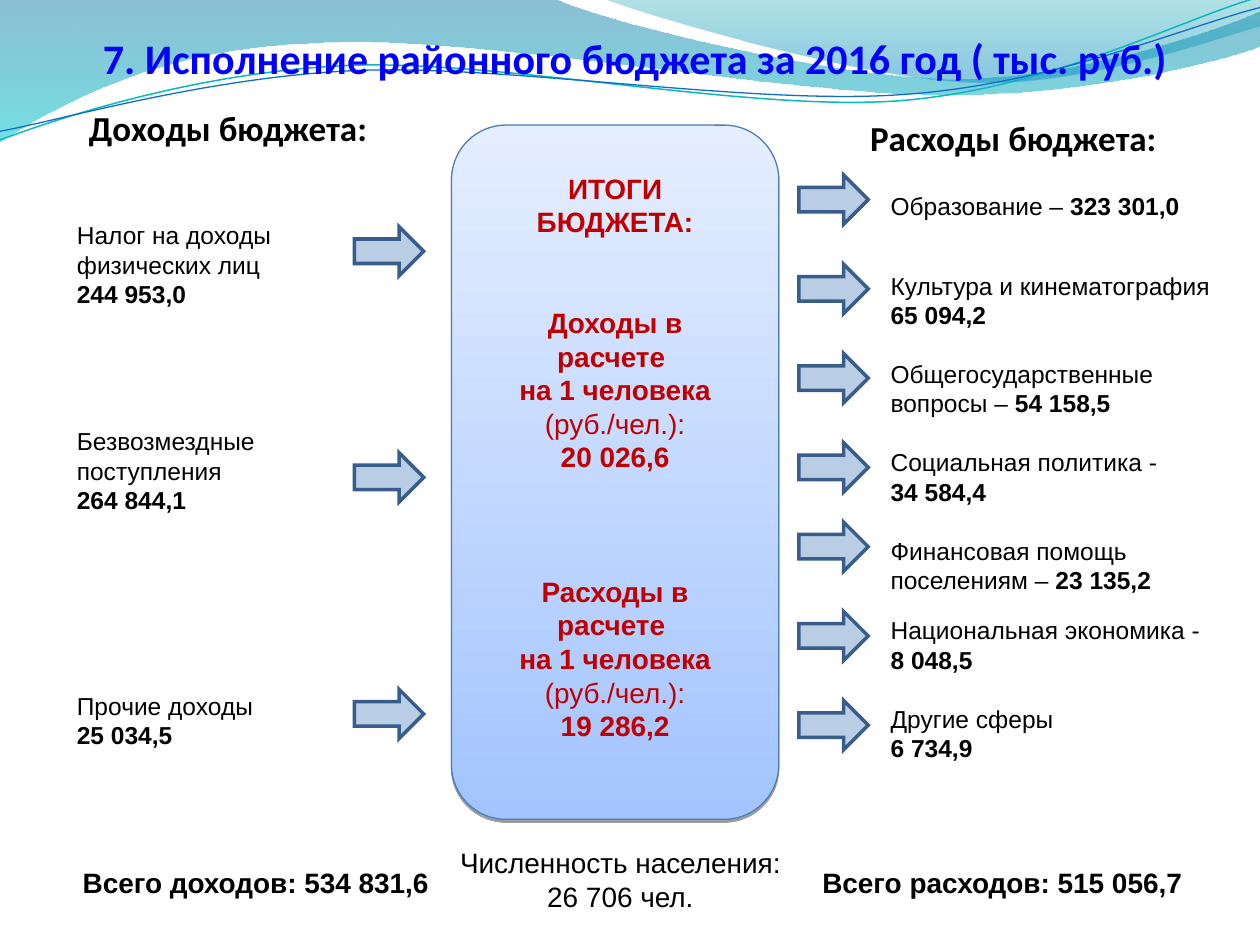
import math
from dataclasses import dataclass
from lxml import etree
from pptx import Presentation
from pptx.dml.color import RGBColor
from pptx.enum import shapes, text
from pptx.oxml import ns
from pptx.util import Pt

HUE = {
    "title": "0000FF", "ink": "000000", "red": "C00000",
    "sea": "0074A1", "aqua": "00C6CF", "teal": "00A1A9", "sky": "008BBF",
    "cyan": "0AB8BF", "blue": "0F6FC6",
    "pale": "E5EEFF", "deep": "A3C4FF", "edge": "4A7EBB",
    "arrow": "B9CDE5", "rim": "385D8A",
}
LEFT, MID = text.PP_ALIGN.LEFT, text.PP_ALIGN.CENTER
TOP, LOW = text.MSO_ANCHOR.TOP, text.MSO_ANCHOR.BOTTOM
ARROW_W, ARROW_H = 39.6, 28
TILT = 2.7


@dataclass
class Run:
    words: str
    bold: bool = False


@dataclass
class Para:
    runs: list[Run]
    gap: float = 0


@dataclass
class Style:
    size: float
    hue: str = "ink"
    font: str = "Arial"
    align: int = LEFT
    anchor: int = TOP


@dataclass
class Stop:
    hue: str
    pos: float
    alpha: int = 100


@dataclass
class Wave:
    box: tuple
    steps: list
    stops: list[Stop]


@dataclass
class Curve:
    box: tuple
    steps: list
    hue: str
    width: float


def rgb(hue: str) -> RGBColor:
    return RGBColor.from_string(HUE[hue])


def plain(words: str, gap: float = 0) -> Para:
    return Para([Run(words)], gap)


def bold(words: str, gap: float = 0) -> Para:
    return Para([Run(words, True)], gap)


def mixed(words: str, sum_: str, gap: float = 0) -> Para:
    return Para([Run(words), Run(sum_, True)], gap)


def write(shape, box: tuple, paras: list[Para], style: Style) -> None:
    shape.left, shape.top, shape.width, shape.height = map(Pt, box)
    frame = shape.text_frame
    frame.word_wrap = True
    frame.auto_size = text.MSO_AUTO_SIZE.NONE
    frame.vertical_anchor = style.anchor
    for n, para in enumerate(paras):
        line = frame.add_paragraph() if n else frame.paragraphs[0]
        line.alignment = style.align
        line.space_before = Pt(para.gap)
        if style.font == "Arial":
            line.line_spacing = Pt(style.size * 1.2)
        props = line._p.get_or_add_pPr()
        props.set("marL", "0")
        props.set("indent", "0")
        etree.SubElement(props, ns.qn("a:buNone"))
        for part in para.runs:
            run = line.add_run()
            run.text = part.words
            run.font.name = style.font
            run.font.size = Pt(style.size)
            run.font.bold = part.bold
            run.font.color.rgb = rgb(style.hue)


def shade(shape, stops: list[Stop]) -> None:
    shape.fill.gradient()
    shape.fill.gradient_angle = 270
    for mark, stop in zip(shape.fill.gradient_stops, stops):
        mark.color.rgb = rgb(stop.hue)
        mark.position = stop.pos
        if stop.alpha < 100:
            tint = mark._gs.find(ns.qn("a:srgbClr"))
            etree.SubElement(tint, ns.qn("a:alpha"), val=str(stop.alpha * 1000))


def trace(slide, box: tuple, steps: list, close: bool, tilt: float = 0):
    x, y, wide, high = box
    mid_x, mid_y = x + wide / 2, y + high / 2
    cos, sin = math.cos(math.radians(tilt)), math.sin(math.radians(tilt))
    pen = slide.shapes.build_freeform(Pt(x), Pt(y))
    pen.add_line_segments([(Pt(x + wide), Pt(y)), (Pt(x + wide), Pt(y + high))])
    shape = pen.convert_to_shape()
    shape.shadow.inherit = False
    shape.rotation = -tilt % 360
    route = next(shape._element.iter(ns.qn("a:path")))
    for old in list(route):
        route.remove(old)
    for n, step in enumerate(steps):
        tag = "cubicBezTo" if len(step) == 6 else "lnTo" if n else "moveTo"
        move = etree.SubElement(route, ns.qn("a:" + tag))
        for a, b in zip(step[::2], step[1::2]):
            a, b = a - mid_x, b - mid_y
            etree.SubElement(move, ns.qn("a:pt"),
                             x=str(Pt(a * cos - b * sin + wide / 2)),
                             y=str(Pt(a * sin + b * cos + high / 2)))
    if close:
        etree.SubElement(route, ns.qn("a:close"))
    return shape


def draw_wave(slide, wave: Wave) -> None:
    shape = trace(slide, wave.box, wave.steps, True)
    shade(shape, wave.stops)
    shape.line.fill.background()


def draw_curve(slide, curve: Curve) -> None:
    shape = trace(slide, curve.box, curve.steps, False, TILT)
    shape.fill.background()
    shape.line.color.rgb = rgb(curve.hue)
    shape.line.width = Pt(curve.width)


def draw_panel(slide) -> None:
    kind = shapes.MSO_SHAPE.ROUNDED_RECTANGLE
    panel = slide.shapes.add_shape(kind, Pt(258), Pt(71.5), Pt(187), Pt(396.7))
    shade(panel, [Stop("pale", 0), Stop("deep", 1)])
    panel.line.color.rgb = rgb("edge")
    panel.line.width = Pt(0.75)
    panel.shadow.inherit = False
    effect = panel._element.spPr.find(ns.qn("a:effectLst"))
    drop = etree.SubElement(effect, ns.qn("a:outerShdw"), blurRad="0",
                            dist=str(Pt(1.6)), dir="5400000", rotWithShape="0")
    tint = etree.SubElement(drop, ns.qn("a:srgbClr"), val=HUE["ink"])
    etree.SubElement(tint, ns.qn("a:alpha"), val="38000")


def draw_arrow(slide, x: float, y: float) -> None:
    kind = shapes.MSO_SHAPE.RIGHT_ARROW
    arrow = slide.shapes.add_shape(kind, Pt(x), Pt(y), Pt(ARROW_W), Pt(ARROW_H))
    arrow.shadow.inherit = False
    arrow.fill.solid()
    arrow.fill.fore_color.rgb = rgb("arrow")
    arrow.line.color.rgb = rgb("rim")
    arrow.line.width = Pt(2)
    etree.SubElement(arrow.line._ln, ns.qn("a:miter"), lim="800000")


def add_note(slide, box: tuple, paras: list[Para], style: Style) -> None:
    write(slide.shapes.add_textbox(*map(Pt, box)), box, paras, style)


def per_head(name: str, sum_: str, gap: float) -> list[Para]:
    return [bold(name + " в расчете ", gap),
            Para([Run("на 1 человека ", True), Run("(руб./чел.):")]), bold(sum_)]


WAVES = [
    Wave((-0.7, -0.7, 721.4, 82),
         [(0, 0), (317, -0.7), (343, 12, 478, 45, 546, 45), (614, 45, 690, 19, 720, 6.5),
          (720.7, 26), (708, 32, 626, 55, 537, 54), (447, 54, 275, 20, 185, 24.5),
          (92, 26, 33, 60, -0.7, 81.3), (0, 0)],
         [Stop("sea", 0, 45), Stop("aqua", 1, 55)]),
    Wave((345, -0.7, 375, 50.4),
         [(345, -0.7), (366, 8, 491, 45, 554, 47), (616, 50, 692, 23, 720, 15), (720, 0),
          (345, -0.7)], [Stop("teal", 0, 30), Stop("sky", 0.8, 45)]),
]
CURVES = [
    Curve((-1.4, 15.8, 721.4, 51.1),
          [(0, 80), (34.6, 67, 113.8, 41, 199.4, 37.4), (284.4, 33.8, 427, 64, 513.4, 57.6),
           (599.8, 51, 675.4, 10.8, 718.6, -1.4)], "cyan", 0.85),
    Curve((-1.4, 21.6, 722.2, 41.8),
          [(0, 75), (33.8, 69, 118, 44, 203.8, 40.3), (290, 36.7, 430, 60.5, 516.2, 54),
           (602, 48.2, 677.5, 15, 720, 4.3)], "blue", 0.75),
]
INCOME = [
    plain("Налог на доходы физических лиц"), bold("244 953,0"),
    plain("Безвозмездные поступления", 67.2), bold("264 844,1"),
    plain("Прочие доходы", 100.8), bold("25 034,5"),
]
SPEND = [
    mixed("Образование – ", "323 301,0"),
    plain("Культура и кинематография", 28.8), bold("65 094,2"),
    mixed("Общегосударственные вопросы – ", "54 158,5", 16.8),
    plain("Социальная политика -", 16.8), bold("34 584,4"),
    mixed("Финансовая помощь поселениям – ", "23 135,2", 16.8),
    plain("Национальная экономика -", 12), bold("8 048,5"),
    plain("Другие сферы", 16.8), bold("6 734,9"),
]
RESULT = [bold("ИТОГИ БЮДЖЕТА:"), *per_head("Доходы", "20 026,6", 38.4),
          *per_head("Расходы", "19 286,2", 57.6)]


def main() -> None:
    deck = Presentation()
    deck.slide_width, deck.slide_height = Pt(720), Pt(540)
    slide = deck.slides.add_slide(deck.slide_layouts[4])
    title, in_head, in_list, out_head, out_list = slide.placeholders
    for wave in WAVES:
        draw_wave(slide, wave)
    for curve in CURVES:
        draw_curve(slide, curve)
    for item in (title, in_head, out_head, in_list, out_list):
        slide.shapes._spTree.append(item._element)

    name = "7. Исполнение районного бюджета за 2016 год ( тыс. руб.)"
    write(title, (31.3, 15, 663, 28), [bold(name)], Style(24, "title", "Calibri", MID))
    write(in_head, (25.5, 60.5, 209.5, 28), [bold("Доходы бюджета:", 5)],
          Style(20, font="Calibri", align=MID, anchor=LOW))
    write(out_head, (490, 60.5, 209.5, 34), [bold("Расходы бюджета:", 5)],
          Style(20, font="Calibri", anchor=LOW))
    write(in_list, (36.7, 122.3, 181.5, 313.5), INCOME, Style(14))
    write(out_list, (501.7, 105.5, 199, 337.5), SPEND, Style(14))

    draw_panel(slide)
    add_note(slide, (275.2, 94.3, 152.6, 353.5), RESULT, Style(16, "red", align=MID))
    note = Style(16, align=MID)
    add_note(slide, (247, 479.7, 215, 46),
             [plain("Численность населения:"), plain("26 706 чел.")], note)
    add_note(slide, (22.3, 491, 247.7, 26.6), [bold("Всего доходов: 534 831,6")], note)
    add_note(slide, (456.5, 491, 232.5, 26.6), [bold("Всего расходов: 515 056,7")], note)

    for y in (129.6, 258.8, 394):
        draw_arrow(slide, 202.5, y)
    for first, count in ((100.1, 4), (298.4, 3)):
        for n in range(count):
            draw_arrow(slide, 456.5, first + 51 * n)
    deck.save("out.pptx")


if __name__ == "__main__":
    main()
